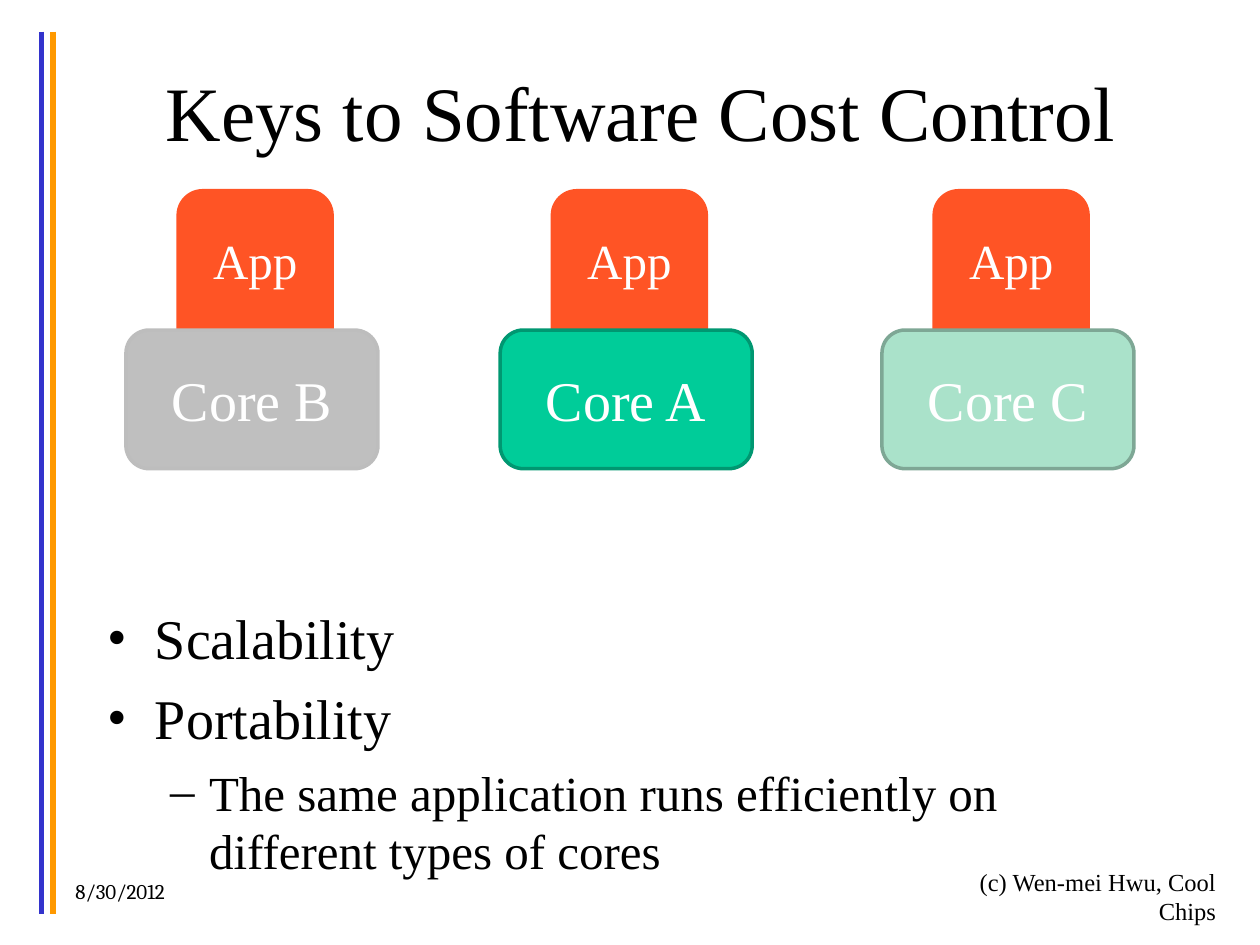
from dataclasses import dataclass

from lxml.etree import SubElement
from pptx import Presentation
from pptx.dml.color import RGBColor
from pptx.enum.shapes import MSO_CONNECTOR, MSO_SHAPE
from pptx.enum.text import MSO_ANCHOR, MSO_AUTO_SIZE, PP_ALIGN
from pptx.oxml.ns import qn
from pptx.util import Inches, Pt

SERIF = "Times New Roman"
BLACK, WHITE = "000000", "FFFFFF"
APP_TOP, CORE_TOP = 1.5, 2.62
APP_W, APP_H = 1.25, 1.5
CORE_W, CORE_H = 2, 1.1
INDENT = 0.4  # from a core's left edge to its app's


@dataclass
class Core:
    name: str
    left: float
    fill: str
    edge: str


@dataclass
class Item:
    text: str
    level: int
    mark: str
    size: int
    left: float
    hang: float


@dataclass
class Rule:
    left: float
    color: str


RULES = [Rule(0.33, "3333CC"), Rule(0.42, "FF9900")]
CORES = [
    Core("Core A", 3.97, "00CC99", "009771"),
    Core("Core C", 7, "AAE2CA", "7EA795"),
    Core("Core B", 1, "BFBFBF", "BDBDBD"),
]
ITEMS = [
    Item("Scalability", 0, "•", 32, 0.38, 0.38),
    Item("Portability", 0, "•", 32, 0.38, 0.38),
    Item("The same application runs efficiently on different types of cores",
         1, "–", 28, 0.81, 0.31),
]


def paint(code: str) -> RGBColor:
    return RGBColor.from_string(code)


def write(para, text: str, *, size: int, font: str = SERIF,
          color: str = BLACK, align=PP_ALIGN.LEFT) -> None:
    para.alignment = align
    run = para.add_run()
    run.text = text
    run.font.size = Pt(size)
    run.font.name = font
    run.font.color.rgb = paint(color)


def place(shape, left: float, top: float, width: float, height: float) -> None:
    shape.left, shape.top = Inches(left), Inches(top)
    shape.width, shape.height = Inches(width), Inches(height)
    shape.text_frame.word_wrap = True
    shape.text_frame.auto_size = MSO_AUTO_SIZE.NONE


def draw_rule(slide, rule: Rule) -> None:
    x = Inches(rule.left)
    line = slide.shapes.add_connector(
        MSO_CONNECTOR.STRAIGHT, x, Inches(0.25), x, Inches(7.25))
    line.line.color.rgb = paint(rule.color)
    line.line.width = Pt(3)
    SubElement(line._element.spPr, qn("a:effectLst"))


def draw_box(slide, text: str, left: float, top: float, width: float,
             height: float, *, fill: str, size: int, edge: str = "",
             base: float = 0.05) -> None:
    box = slide.shapes.add_shape(MSO_SHAPE.ROUNDED_RECTANGLE, 0, 0, 0, 0)
    place(box, left, top, width, height)
    box.shadow.inherit = False
    box.fill.solid()
    box.fill.fore_color.rgb = paint(fill)
    if edge:
        box.line.color.rgb = paint(edge)
        box.line.width = Pt(2)
    else:
        box.line.fill.background()
    frame = box.text_frame
    frame.vertical_anchor = MSO_ANCHOR.MIDDLE
    frame.margin_bottom = Inches(base)
    write(frame.paragraphs[0], text, size=size, color=WHITE,
          align=PP_ALIGN.CENTER)


def draw_core(slide, core: Core) -> None:
    draw_box(slide, "App", core.left + INDENT, APP_TOP, APP_W, APP_H,
             fill="FF5425", size=28, base=0.43)
    draw_box(slide, core.name, core.left, CORE_TOP, CORE_W, CORE_H,
             fill=core.fill, size=32, edge=core.edge)


def add_item(para, item: Item) -> None:
    para.level = item.level
    para.space_before = Pt(round(item.size * 0.23, 1))
    write(para, item.text, size=item.size)
    props = para._p.get_or_add_pPr()
    props.set("marL", str(Inches(item.left)))
    props.set("indent", str(-Inches(item.hang)))
    SubElement(props, qn("a:buFont")).set("typeface", SERIF)
    SubElement(props, qn("a:buChar")).set("char", item.mark)


def add_note(slide, text: str, left: float, top: float, width: float,
             **style) -> None:
    box = slide.shapes.add_textbox(0, 0, 0, 0)
    place(box, left, top, width, 0.5)
    write(box.text_frame.paragraphs[0], text, **style)


def main() -> None:
    deck = Presentation()
    deck.slide_width, deck.slide_height = Inches(10), Inches(7.5)
    slide = deck.slides.add_slide(deck.slide_layouts[1])

    # Side rules
    for rule in RULES:
        draw_rule(slide, rule)

    # Title
    title = slide.shapes.title
    place(title, 0.75, 0.25, 8.67, 1.25)
    title.text_frame.vertical_anchor = MSO_ANCHOR.MIDDLE
    write(title.text_frame.paragraphs[0], "Keys to Software Cost Control",
          size=44, align=PP_ALIGN.CENTER)

    # Bullet list
    body = slide.placeholders[1]
    place(body, 0.75, 4.74, 8.67, 1.93)
    frame = body.text_frame
    for i, item in enumerate(ITEMS):
        add_item(frame.add_paragraph() if i else frame.paragraphs[0], item)

    # Date and credit
    add_note(slide, "8/30/2012", 0.5, 6.92, 3.83, size=12, font="Cambria")
    add_note(slide, "(c) Wen-mei Hwu, Cool Chips", 7.67, 6.83, 2.08,
             size=14, align=PP_ALIGN.RIGHT)

    # Apps on cores
    for core in CORES:
        draw_core(slide, core)

    deck.save("out.pptx")


if __name__ == "__main__":
    main()
